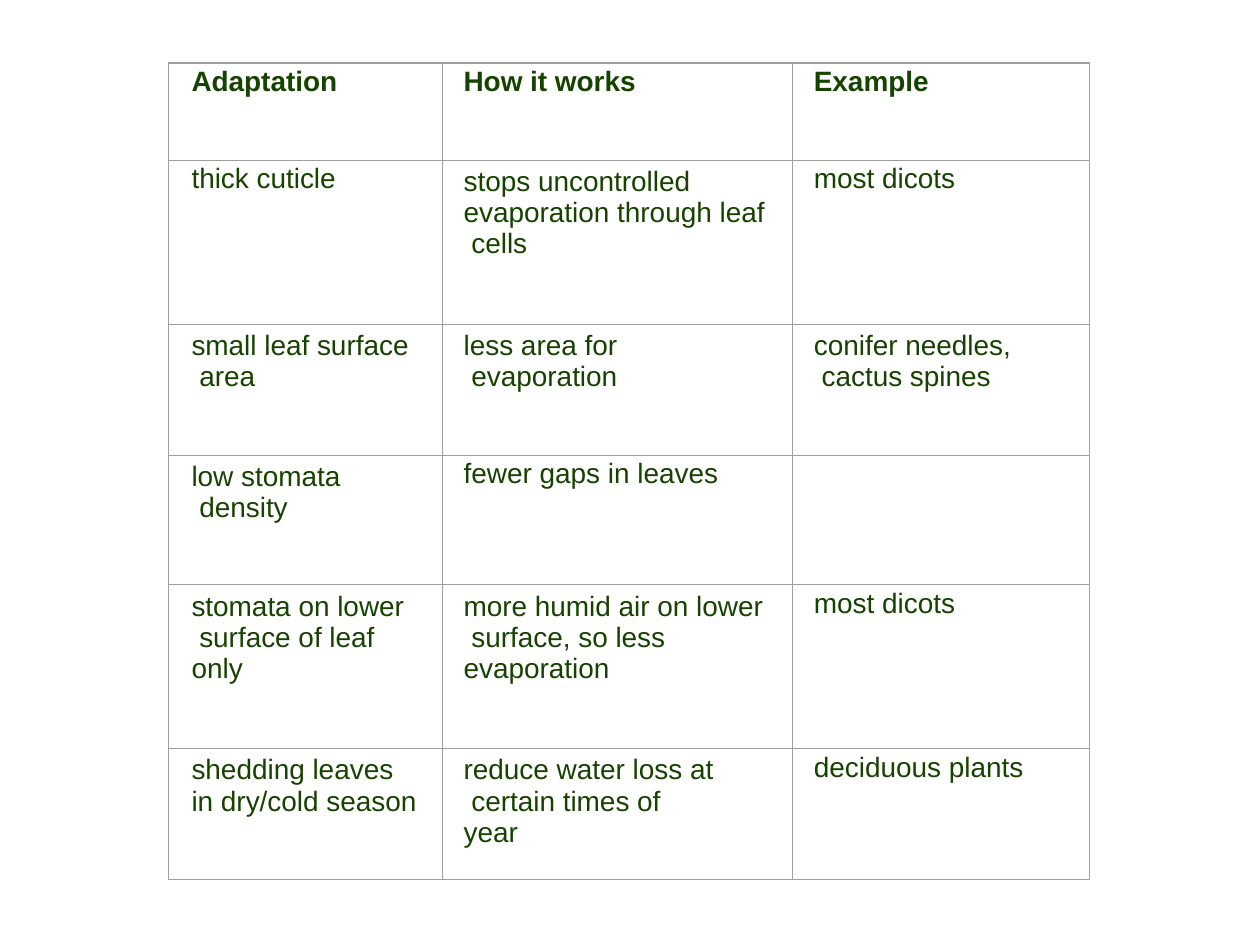
from lxml import etree
from pptx import Presentation
from pptx import util as u
from pptx.dml.color import RGBColor
from pptx.oxml.ns import qn

GREEN, GREY = "174300", "9F9F9F"
COLS = [2.17, 2.78, 2.36]
TALL = [0.77, 1.3, 1.04, 1.03, 1.3, 1.04]
ROWS = [
    ["Adaptation", "How it works", "Example"],
    ["thick cuticle", "stops uncontrolled\nevaporation through leaf\n cells", "most dicots"],
    ["small leaf surface\n area", "less area for\n evaporation", "conifer needles,\n cactus spines"],
    ["low stomata\n density", "fewer gaps in leaves", ""],
    ["stomata on lower\n surface of leaf\nonly",
     "more humid air on lower\n surface, so less\nevaporation", "most dicots"],
    ["shedding leaves\nin dry/cold season",
     "reduce water loss at\n certain times of\nyear", "deciduous plants"],
]


def tint(code):
    """Turn a hex string into a colour."""
    return RGBColor.from_string(code)


def edge(cell, sides):
    """Draw the four borders of a cell, with widths in points by side."""
    props = cell._tc.get_or_add_tcPr()
    for spot, (side, width) in enumerate(sides.items()):
        line = etree.Element(qn(f"a:ln{side}"), w=str(u.Pt(width)))
        fill = etree.SubElement(line, qn("a:solidFill"))
        etree.SubElement(fill, qn("a:srgbClr"), val=GREY)
        props.insert(spot, line)


def write(cell, words, bold):
    """Put words into a cell, one run for each line."""
    lines = words.split("\n")
    cell.margin_top = u.Inches(0.05 if len(lines) > 1 else 0.03)
    para = cell.text_frame.paragraphs[0]
    para.font.size = u.Pt(16)
    if len(lines) > 1:
        para.line_spacing = u.Pt(17.8)
    for n, line in enumerate(lines):
        if n:
            para.add_line_break()
        if line:
            run = para.add_run()
            run.text = line
            run.font.name, run.font.size = "Arial", u.Pt(16)
            run.font.bold = bold
            run.font.color.rgb = tint(GREEN)


def grid(slide, left, top, wide, high):
    """Place the table of leaf adaptations in the given box."""
    box = [u.Inches(n) for n in (left, top, wide, high)]
    table = slide.shapes.add_table(len(ROWS), len(COLS), *box).table
    table.first_row = table.horz_banding = False
    for col, size in zip(table.columns, COLS):
        col.width = u.Inches(wide * size / sum(COLS))
    for row, size in zip(table.rows, TALL):
        row.height = u.Inches(high * size / sum(TALL))
    for r, row in enumerate(ROWS):
        for c, words in enumerate(row):
            cell = table.cell(r, c)
            cell.margin_left = u.Inches(0.17 if c else 0.18)
            cell.margin_right = cell.margin_bottom = 0
            cell.fill.background()
            outer = {"L": c == 0, "R": c == len(COLS) - 1,
                     "T": r == 0, "B": r == len(ROWS) - 1}
            edge(cell, {k: 0.75 if out else 0.25 for k, out in outer.items()})
            write(cell, words, r == 0)


def main():
    """Build the slide and save it."""
    deck = Presentation()
    deck.slide_width, deck.slide_height = u.Inches(10), u.Inches(7.5)
    slide = deck.slides.add_slide(deck.slide_layouts[6])
    grid(slide, 1.34, 0.5, 7.31, 6.48)
    deck.save("out.pptx")


if __name__ == "__main__":
    main()
